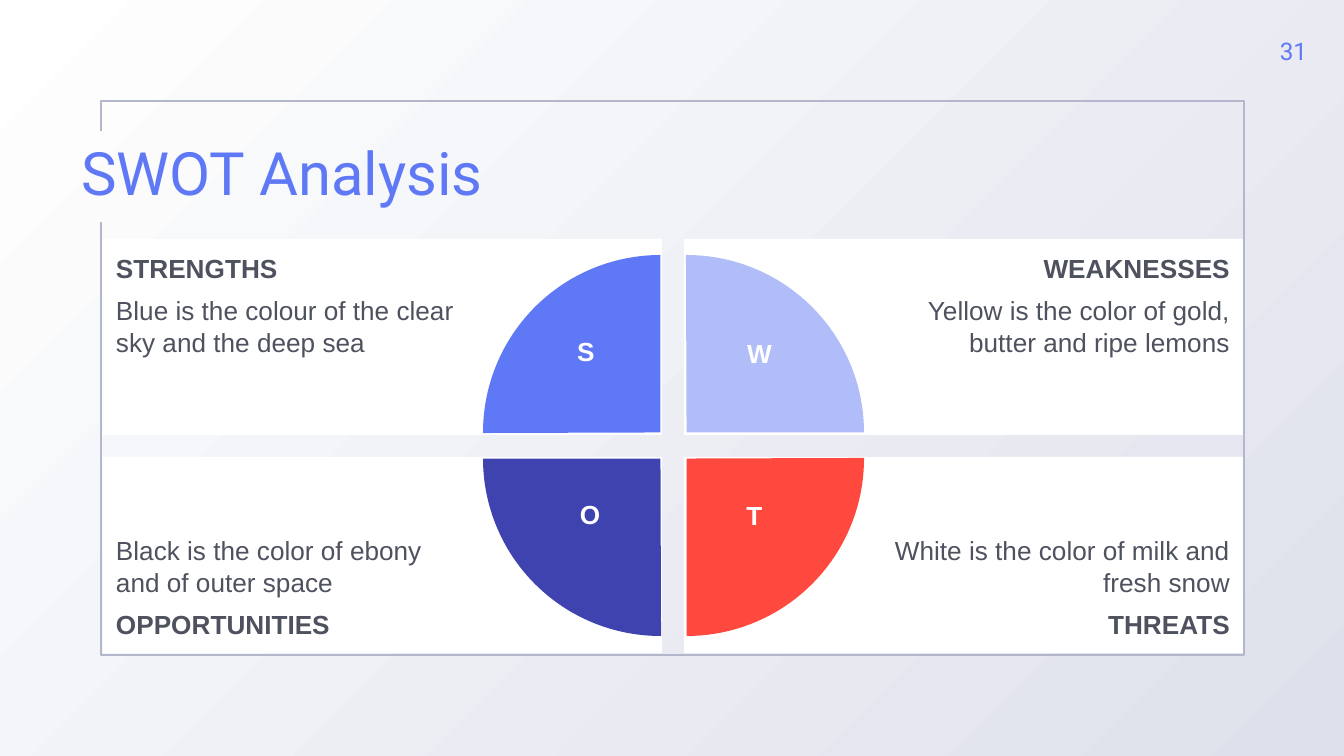
"""Build a SWOT analysis slide with four panels around a quartered circle."""
from pptx import Presentation
from pptx.dml.color import RGBColor
from pptx.enum.shapes import MSO_SHAPE
from pptx.enum.text import MSO_ANCHOR, MSO_AUTO_SIZE, PP_ALIGN
from pptx.util import Emu, Pt

COLORS = {
    "white": "FFFFFF", "haze": "DEE0EB", "frame": "B3B7CC", "text": "4E515E",
    "blue": "5F79F6", "pale": "B1BDF8", "red": "FF493F", "indigo": "3F43AF",
}
TITLE = "SWOT Analysis"
PAGE_NUMBER = "31"
PANELS = [
    (0, 0, "STRENGTHS", "Blue is the colour of the clear sky and the deep sea"),
    (1, 0, "WEAKNESSES", "Yellow is the color of gold, butter and ripe lemons"),
    (0, 1, "OPPORTUNITIES", "Black is the color of ebony and of outer space"),
    (1, 1, "THREATS", "White is the color of milk and fresh snow"),
]
QUARTERS = [(0, 0, "blue"), (1, 0, "pale"), (1, 1, "red"), (0, 1, "indigo")]
LETTERS = [
    ("S", (564, 329, 43, 65)),
    ("W", (714, 331, 91, 63)),
    ("O", (559, 492, 62, 65)),
    ("T", (731, 493, 47, 63)),
]
FRAME = [(101, 131), (101, 101), (1244, 101), (1244, 655), (101, 655), (101, 222)]
PANEL_LEFT, PANEL_TOP, PANEL_WIDTH, PANEL_HEIGHT = 103, 239, 559, 196
COLUMN_STEP, ROW_STEP = 581, 218
PIE_LEFT, PIE_TOP, PIE_SIZE, PIE_STEP = 483, 255, 355, 26
INSET, WIDE_INSET = 13, 202
SCALE = 914400 / 134.4


def px(*lengths):
    return [Emu(round(length * SCALE)) for length in lengths]


def color(name):
    return RGBColor.from_string(COLORS[name])


def style(para, size, name, face="Arial", bold=False, align=PP_ALIGN.LEFT):
    para.alignment = align
    font = para.font
    font.size, font.name, font.bold = Pt(size), face, bold
    font.color.rgb = color(name)


def set_insets(frame, left, top, right, bottom):
    frame.margin_left, frame.margin_top, frame.margin_right, frame.margin_bottom = px(
        left, top, right, bottom)


def add_shape(page, kind, area, fill):
    shape = page.shapes.add_shape(kind, *px(*area))
    shape.shadow.inherit = False
    shape.fill.solid()
    shape.fill.fore_color.rgb = color(fill)
    shape.line.fill.background()
    return shape


def add_label(page, area, text):
    box = page.shapes.add_textbox(*px(*area))
    box.text_frame.word_wrap = True
    box.text_frame.text = text
    return box.text_frame


def paint_background(page):
    fill = page.background.fill
    fill.gradient()
    fill.gradient_angle = 315
    for stop, position, name in zip(fill.gradient_stops, (0, 1), ("white", "haze")):
        stop.position = position
        stop.color.rgb = color(name)


def add_frame(page):
    builder = page.shapes.build_freeform(*FRAME[0], scale=SCALE)
    builder.add_line_segments(FRAME[1:], close=False)
    outline = builder.convert_to_shape()
    outline.shadow.inherit = False
    outline.fill.background()
    outline.line.color.rgb = color("frame")
    outline.line.width = Pt(0.75)


def add_title(page):
    title = page.shapes.title
    title.left, title.top, title.width, title.height = px(81, 130, 1142, 93)
    frame = title.text_frame
    frame.text = TITLE
    frame.auto_size = MSO_AUTO_SIZE.NONE
    frame.vertical_anchor = MSO_ANCHOR.MIDDLE
    set_insets(frame, 0, 0, 0, 0)
    para = frame.paragraphs[0]
    para.line_spacing = 0.9
    style(para, 32, "blue", "Roboto")


def add_page_number(page):
    frame = add_label(page, (1243, 0, 101, 101), PAGE_NUMBER)
    frame.vertical_anchor = MSO_ANCHOR.MIDDLE
    set_insets(frame, 0, 0, 0, 0)
    style(frame.paragraphs[0], 13, "blue", "Roboto", align=PP_ALIGN.CENTER)


def add_panel(page, column, row, heading, body):
    area = (PANEL_LEFT + column * COLUMN_STEP, PANEL_TOP + row * ROW_STEP,
            PANEL_WIDTH, PANEL_HEIGHT)
    frame = add_shape(page, MSO_SHAPE.RECTANGLE, area, "white").text_frame
    frame.word_wrap = True
    frame.vertical_anchor = MSO_ANCHOR.BOTTOM if row else MSO_ANCHOR.TOP
    left, right = (WIDE_INSET, INSET) if column else (INSET, WIDE_INSET)
    set_insets(frame, left, INSET, right, INSET)
    lines = [body, heading] if row else [heading, body]
    frame.text = "\n".join(lines)
    align = PP_ALIGN.RIGHT if column else PP_ALIGN.LEFT
    for para, line in zip(frame.paragraphs, lines):
        style(para, 14, "text", bold=line == heading, align=align)
    last = frame.paragraphs[-1]
    last.space_before = last.space_after = Pt(6)


def add_quarter(page, turn, column, row, fill):
    area = (PIE_LEFT + column * PIE_STEP, PIE_TOP + row * PIE_STEP, PIE_SIZE, PIE_SIZE)
    pie = add_shape(page, MSO_SHAPE.PIE, area, fill)
    pie.adjustments[0] = 107.89
    pie.adjustments[1] = 162
    pie.rotation = turn * 90


def main():
    deck = Presentation()
    deck.slide_width, deck.slide_height = px(1344, 756)
    page = deck.slides.add_slide(deck.slide_layouts[5])
    paint_background(page)
    add_frame(page)
    add_title(page)
    add_page_number(page)
    for panel in PANELS:
        add_panel(page, *panel)
    for turn, quarter in enumerate(QUARTERS):
        add_quarter(page, turn, *quarter)
    for letter, area in LETTERS:
        para = add_label(page, area, letter).paragraphs[0]
        style(para, 14, "white", bold=True, align=PP_ALIGN.CENTER)
    deck.save("out.pptx")


if __name__ == "__main__":
    main()
